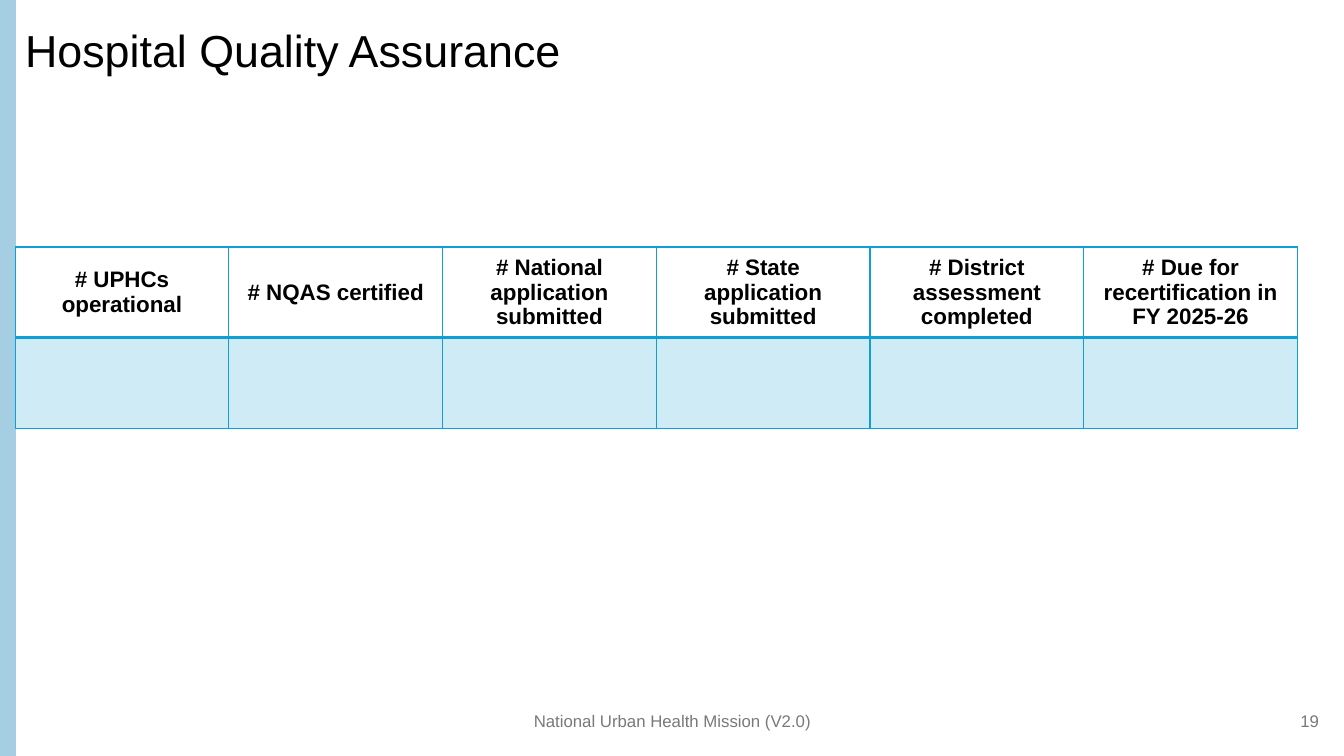
from lxml import etree
from pptx import Presentation
from pptx import util as u
from pptx.dml.color import RGBColor
from pptx.enum import shapes, text
from pptx.oxml import ns

WIDTH, HEIGHT = 13.33, 7.5
MARGIN = 0.15
FONT = "Arial"
COLORS = {"band": "A6CEE3", "ink": "000000", "muted": "797979", "grid": "0F9ED5"}
HEADERS = [
    "# UPHCs operational",
    "# NQAS certified",
    "# National application submitted",
    "# State application submitted",
    "# District assessment completed",
    "# Due for recertification in FY 2025-26",
]
COLUMN_WIDTH, ROW_HEIGHT = 2.12, 0.9
TABLE_TOP = 2.45
FOOTER_TOP, FOOTER_HEIGHT = 6.95, 0.4


def color(name):
    """Return the named colour."""
    return RGBColor.from_string(COLORS[name])


def write(frame, words, size=12, ink="muted", bold=False, align="LEFT", spacing=1.0):
    """Put one formatted paragraph into a text frame."""
    frame.word_wrap = True
    para = frame.paragraphs[0]
    para.alignment = getattr(text.PP_ALIGN, align)
    para.line_spacing = spacing
    span = para.add_run()
    span.text = words
    span.font.name, span.font.size, span.font.bold = FONT, u.Pt(size), bold
    span.font.color.rgb = color(ink)


def add_label(page, area, words, **style):
    """Add a vertically centred text box."""
    box = page.shapes.add_textbox(*map(u.Inches, area))
    box.text_frame.vertical_anchor = text.MSO_ANCHOR.MIDDLE
    write(box.text_frame, words, **style)


def add_side_band(page):
    """Add the coloured band along the left edge."""
    band = page.shapes.add_shape(
        shapes.MSO_SHAPE.RECTANGLE, 0, 0, u.Inches(MARGIN), u.Inches(HEIGHT))
    band.shadow.inherit = False
    band.fill.solid()
    band.fill.fore_color.rgb = band.line.color.rgb = color("band")
    band.line.width = u.Pt(1.5)


def set_borders(cell, bottom):
    """Draw the four cell borders, with its own width for the bottom one."""
    properties = cell._tc.get_or_add_tcPr()
    widths = {"a:lnL": 1, "a:lnR": 1, "a:lnT": 1, "a:lnB": bottom}
    for place, (tag, width) in enumerate(widths.items()):
        line = etree.Element(ns.qn(tag), w=str(u.Pt(width)))
        fill = etree.SubElement(line, ns.qn("a:solidFill"))
        etree.SubElement(fill, ns.qn("a:srgbClr"), val=COLORS["grid"])
        properties.insert(place, line)


def tint(cell, percent):
    """Fill a cell with the grid colour at the given opacity."""
    cell.fill.solid()
    cell.fill.fore_color.rgb = color("grid")
    shade = cell._tc.tcPr.find(".//" + ns.qn("a:srgbClr"))
    etree.SubElement(shade, ns.qn("a:alpha"), val=str(percent * 1000))


def add_status_table(page):
    """Add the header row and the empty row for the figures."""
    area = (MARGIN, TABLE_TOP, COLUMN_WIDTH * len(HEADERS), ROW_HEIGHT * 2)
    table = page.shapes.add_table(2, len(HEADERS), *map(u.Inches, area)).table
    table.first_row = table.horz_banding = False
    for column, words in enumerate(HEADERS):
        table.columns[column].width = u.Inches(COLUMN_WIDTH)
        header, figure = table.cell(0, column), table.cell(1, column)
        header.fill.background()
        header.vertical_anchor = text.MSO_ANCHOR.MIDDLE
        write(header.text_frame, words, size=16, ink="ink", bold=True, align="CENTER")
        tint(figure, 20)
        set_borders(header, bottom=2)
        set_borders(figure, bottom=1)


def main():
    """Build and save the slide."""
    deck = Presentation()
    deck.slide_width, deck.slide_height = u.Inches(WIDTH), u.Inches(HEIGHT)
    page = deck.slides.add_slide(deck.slide_layouts[6])
    add_side_band(page)
    add_label(page, (MARGIN, MARGIN, 13.05, 0.75), "Hospital Quality Assurance",
              size=32, ink="ink", spacing=0.9)
    add_label(page, (4.42, FOOTER_TOP, 4.5, FOOTER_HEIGHT),
              "National Urban Health Mission (V2.0)", align="CENTER")
    add_label(page, (10.18, FOOTER_TOP, 3, FOOTER_HEIGHT), "19", align="RIGHT")
    add_status_table(page)
    deck.save("out.pptx")


if __name__ == "__main__":
    main()
